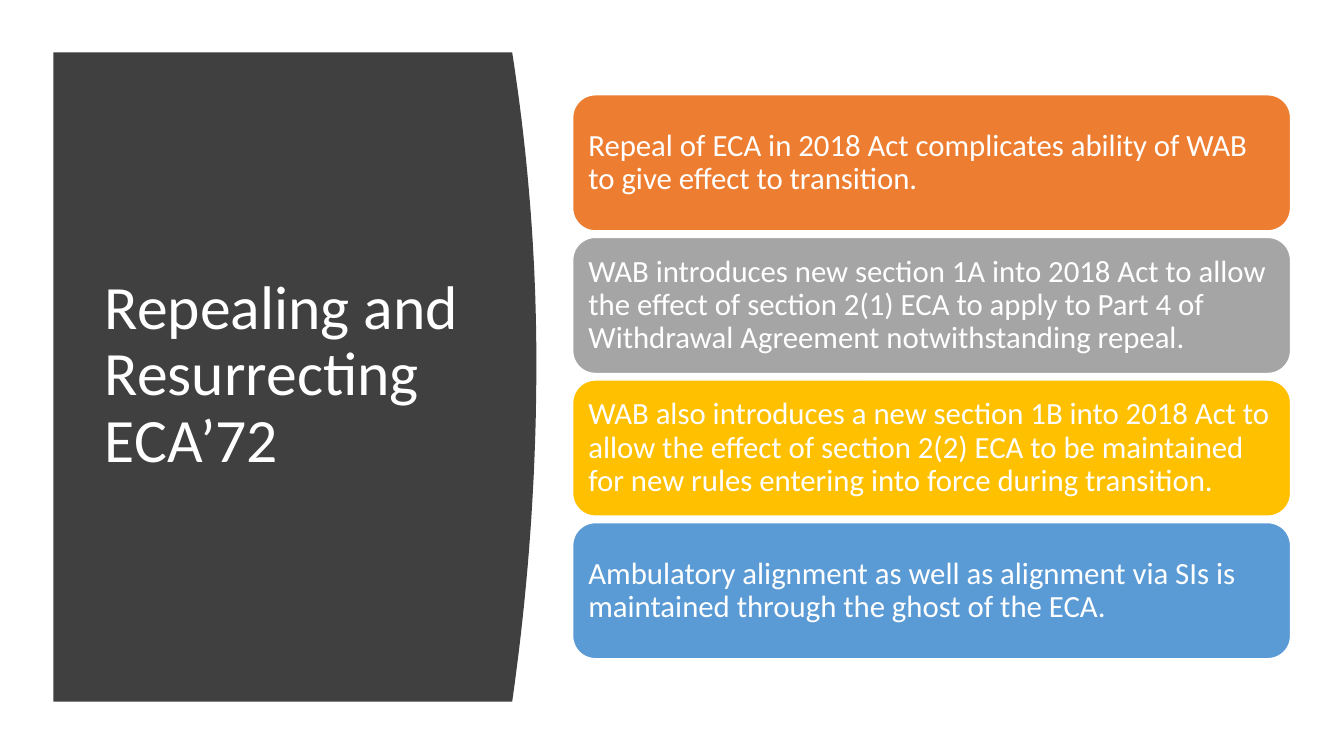
from pptx import Presentation
from pptx.dml.color import RGBColor
from pptx.enum.shapes import MSO_SHAPE
from pptx.enum.text import MSO_ANCHOR, MSO_AUTO_SIZE, PP_ALIGN
from pptx.util import Inches, Pt

ROUND = MSO_SHAPE.ROUNDED_RECTANGLE
MIDDLE = MSO_ANCHOR.MIDDLE
NO_FIT = MSO_AUTO_SIZE.NONE
LEFT = PP_ALIGN.LEFT
FONT = "Calibri"
COLORS = {
    "white": "FFFFFF",
    "dark": "404040",
    "orange": "ED7D31",
    "gray": "A5A5A5",
    "gold": "FFC000",
    "blue": "5B9BD5",
}
CARDS = [
    ("orange", "Repeal of ECA in 2018 Act complicates ability of WAB to give effect to transition."),
    ("gray", "WAB introduces new section 1A into 2018 Act to allow the effect of section 2(1) ECA "
             "to apply to Part 4 of Withdrawal Agreement notwithstanding repeal."),
    ("gold", "WAB also introduces a new section 1B into 2018 Act to allow the effect of section 2(2) ECA "
             "to be maintained for new rules entering into force during transition."),
    ("blue", "Ambulatory alignment as well as alignment via SIs is maintained through the ghost of the ECA."),
]


def color(name):
    """Return the named colour."""
    return RGBColor.from_string(COLORS[name])


def write(shape, text, size):
    """Set white, left-aligned, vertically centred text."""
    frame = shape.text_frame
    frame.text = text
    frame.word_wrap = True
    frame.auto_size = NO_FIT
    frame.vertical_anchor = MIDDLE
    para = frame.paragraphs[0]
    para.alignment = LEFT
    para.line_spacing = 0.9
    font = para.runs[0].font
    font.name = FONT
    font.size = Pt(size)
    font.color.rgb = color("white")


def add_panel(slide):
    """Draw the dark panel with a bulging right side behind the title."""
    left, top, bottom = 0.53, 0.52, 6.96
    edge, bulge, peak, steps = 5.08, 0.24, 3.6, 48
    points = []
    for step in range(steps + 1):
        y = top + (bottom - top) * step / steps
        reach = peak - top if y < peak else bottom - peak
        x = edge + bulge * (1 - ((y - peak) / reach) ** 2)
        points.append((Inches(x), Inches(y)))
    points.append((Inches(left), Inches(bottom)))
    pen = slide.shapes.build_freeform(Inches(left), Inches(top))
    pen.add_line_segments(points, close=True)
    panel = pen.convert_to_shape()
    panel.shadow.inherit = False
    panel.fill.solid()
    panel.fill.fore_color.rgb = color("dark")
    panel.line.fill.background()
    slide.shapes.title.element.addprevious(panel.element)


def set_title(slide, text):
    """Place and format the title."""
    title = slide.shapes.title
    title.left, title.top = Inches(0.94), Inches(1.11)
    title.width, title.height = Inches(3.74), Inches(5.24)
    write(title, text, 44)


def add_card(slide, top, fill, text):
    """Add one rounded card with its text."""
    card = slide.shapes.add_shape(ROUND, Inches(5.68), Inches(top), Inches(7.12), Inches(1.35))
    card.shadow.inherit = False
    card.fill.solid()
    card.fill.fore_color.rgb = color(fill)
    card.line.color.rgb = color("white")
    card.line.width = Pt(1)
    frame = card.text_frame
    frame.margin_left = frame.margin_right = Inches(0.09)
    frame.margin_top = frame.margin_bottom = Inches(0.09)
    write(card, text, 22)


def main():
    """Build and save the slide."""
    deck = Presentation()
    deck.slide_width, deck.slide_height = Inches(13.33), Inches(7.5)
    slide = deck.slides.add_slide(deck.slide_layouts[5])
    set_title(slide, "Repealing and Resurrecting ECA’72")
    add_panel(slide)
    for row, (fill, text) in enumerate(CARDS):
        add_card(slide, 0.94 + 1.415 * row, fill, text)
    deck.save("out.pptx")


if __name__ == "__main__":
    main()
